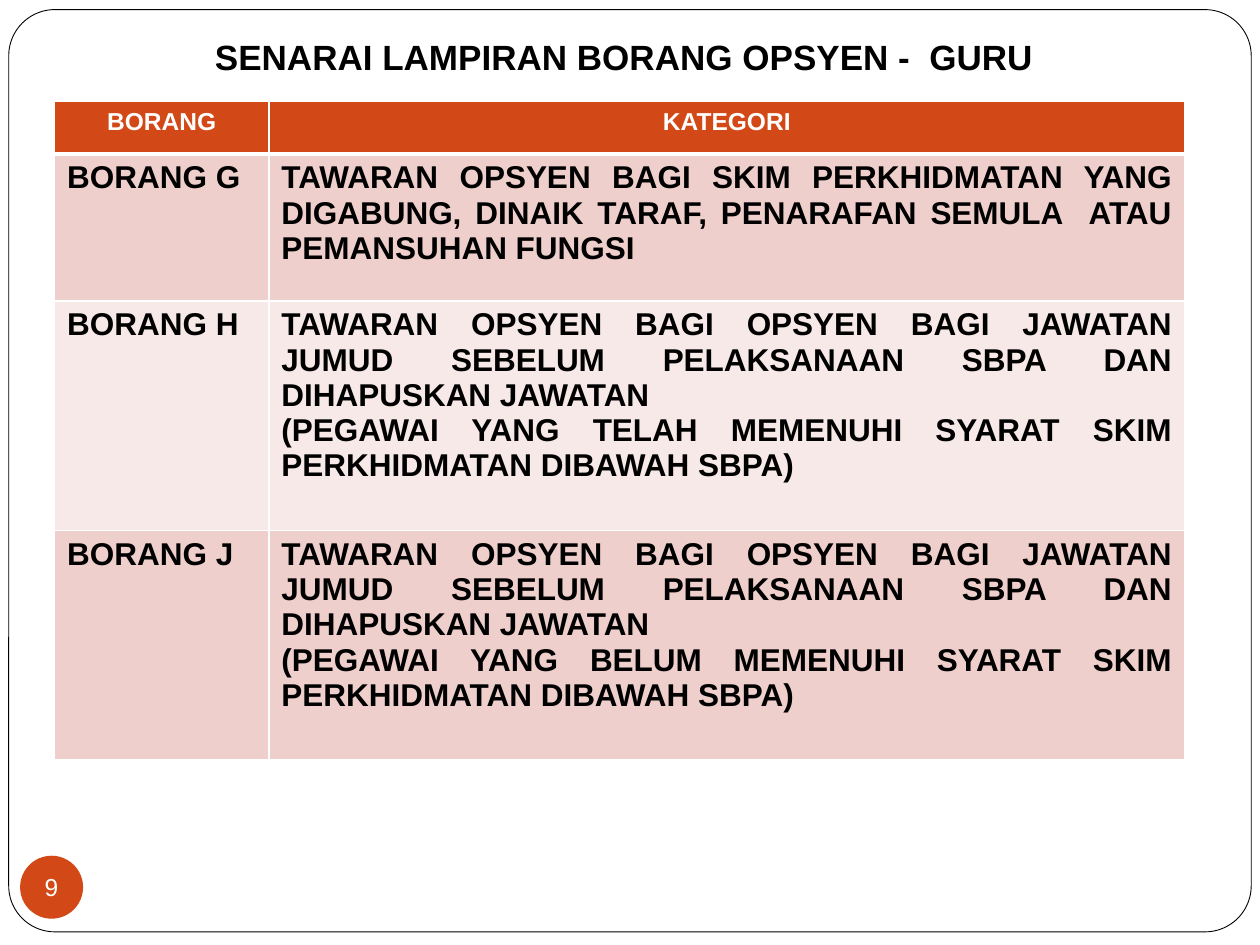
"""Build the slide listing the option forms for teachers."""
from dataclasses import dataclass

from lxml.etree import SubElement
from pptx import Presentation
from pptx.dml.color import RGBColor
from pptx.enum.shapes import MSO_SHAPE
from pptx.enum.text import MSO_ANCHOR, MSO_AUTO_SIZE, PP_ALIGN
from pptx.oxml.ns import qn
from pptx.util import Pt


@dataclass(frozen=True)
class Theme:
    font: str = "Arial"
    black: RGBColor = RGBColor(0x00, 0x00, 0x00)
    white: RGBColor = RGBColor(0xFF, 0xFF, 0xFF)
    accent: RGBColor = RGBColor(0xD3, 0x48, 0x17)
    band_dark: RGBColor = RGBColor(0xEF, 0xCF, 0xCC)
    band_light: RGBColor = RGBColor(0xF7, 0xE9, 0xE8)
    title_size: int = 20
    body_size: int = 18
    small_size: int = 14


theme = Theme()


def style(p, size, color, align, bold=True):
    p.alignment = align
    p.font.name = theme.font
    p.font.size = Pt(size)
    p.font.bold = bold
    p.font.color.rgb = color


def add_border(cell, side, width):
    ln = SubElement(cell._tc.get_or_add_tcPr(), qn(f"a:ln{side}"), w=str(Pt(width)))
    fill = SubElement(ln, qn("a:solidFill"))
    SubElement(fill, qn("a:srgbClr"), val=str(theme.white))


prs = Presentation()
prs.slide_width, prs.slide_height = Pt(720), Pt(540)
s = prs.slides.add_slide(prs.slide_layouts[5])

frame = s.shapes.add_shape(MSO_SHAPE.ROUNDED_RECTANGLE, Pt(5), Pt(5.5), Pt(710), Pt(527))
frame.adjustments[0] = 0.05
frame.shadow.inherit = False
frame.fill.background()
frame.line.color.rgb = theme.black
frame.line.width = Pt(0.5)

title = s.shapes.title
title.left, title.top, title.width, title.height = Pt(95.6), Pt(16.8), Pt(522), Pt(31.5)
title.fill.solid()
title.fill.fore_color.rgb = theme.white
tf = title.text_frame
tf.text = "SENARAI LAMPIRAN BORANG OPSYEN -  GURU"
tf.word_wrap = True
tf.auto_size = MSO_AUTO_SIZE.SHAPE_TO_FIT_TEXT
tf.vertical_anchor = MSO_ANCHOR.TOP
style(tf.paragraphs[0], theme.title_size, theme.black, PP_ALIGN.CENTER)

frozen_post = ("TAWARAN OPSYEN BAGI OPSYEN BAGI JAWATAN JUMUD SEBELUM "
               "PELAKSANAAN SBPA DAN DIHAPUSKAN JAWATAN\n"
               "(PEGAWAI YANG {} MEMENUHI SYARAT SKIM PERKHIDMATAN DIBAWAH SBPA)")
rows = [
    ("BORANG", "KATEGORI"),
    ("BORANG G", "TAWARAN OPSYEN BAGI SKIM PERKHIDMATAN YANG DIGABUNG, "
                 "DINAIK TARAF, PENARAFAN SEMULA  ATAU PEMANSUHAN FUNGSI"),
    ("BORANG H", frozen_post.format("TELAH")),
    ("BORANG J", frozen_post.format("BELUM")),
]
col_widths = [122.4, 523.4]
row_heights = [30, 84, 131.2, 131.2]
row_fills = [theme.accent, theme.band_dark, theme.band_light, theme.band_dark]

table = s.shapes.add_table(len(rows), len(col_widths), Pt(31.2), Pt(58),
                           Pt(sum(col_widths)), Pt(sum(row_heights))).table
for column, width in zip(table.columns, col_widths):
    column.width = Pt(width)
for i, (texts, height, fill) in enumerate(zip(rows, row_heights, row_fills)):
    table.rows[i].height = Pt(height)
    header = i == 0
    for j, text in enumerate(texts):
        cell = table.cell(i, j)
        for side in "LRTB":
            under_header = (i, side) in ((0, "B"), (1, "T"))
            add_border(cell, side, 3 if under_header else 1)
        cell.fill.solid()
        cell.fill.fore_color.rgb = fill
        cell.text = text
        for p in cell.text_frame.paragraphs:
            if header:
                style(p, theme.small_size, theme.white, PP_ALIGN.CENTER)
            else:
                style(p, theme.body_size, theme.black,
                      PP_ALIGN.JUSTIFY if j else PP_ALIGN.LEFT)

badge = s.shapes.add_shape(MSO_SHAPE.OVAL, Pt(11.5), Pt(489), Pt(36), Pt(36))
badge.shadow.inherit = False
badge.fill.solid()
badge.fill.fore_color.rgb = theme.accent
badge.line.fill.background()
tf = badge.text_frame
tf.margin_left = tf.margin_right = tf.margin_top = tf.margin_bottom = 0
tf.word_wrap = False
tf.vertical_anchor = MSO_ANCHOR.MIDDLE
tf.text = "9"
style(tf.paragraphs[0], theme.small_size, theme.white, PP_ALIGN.CENTER, bold=False)

prs.save("out.pptx")
